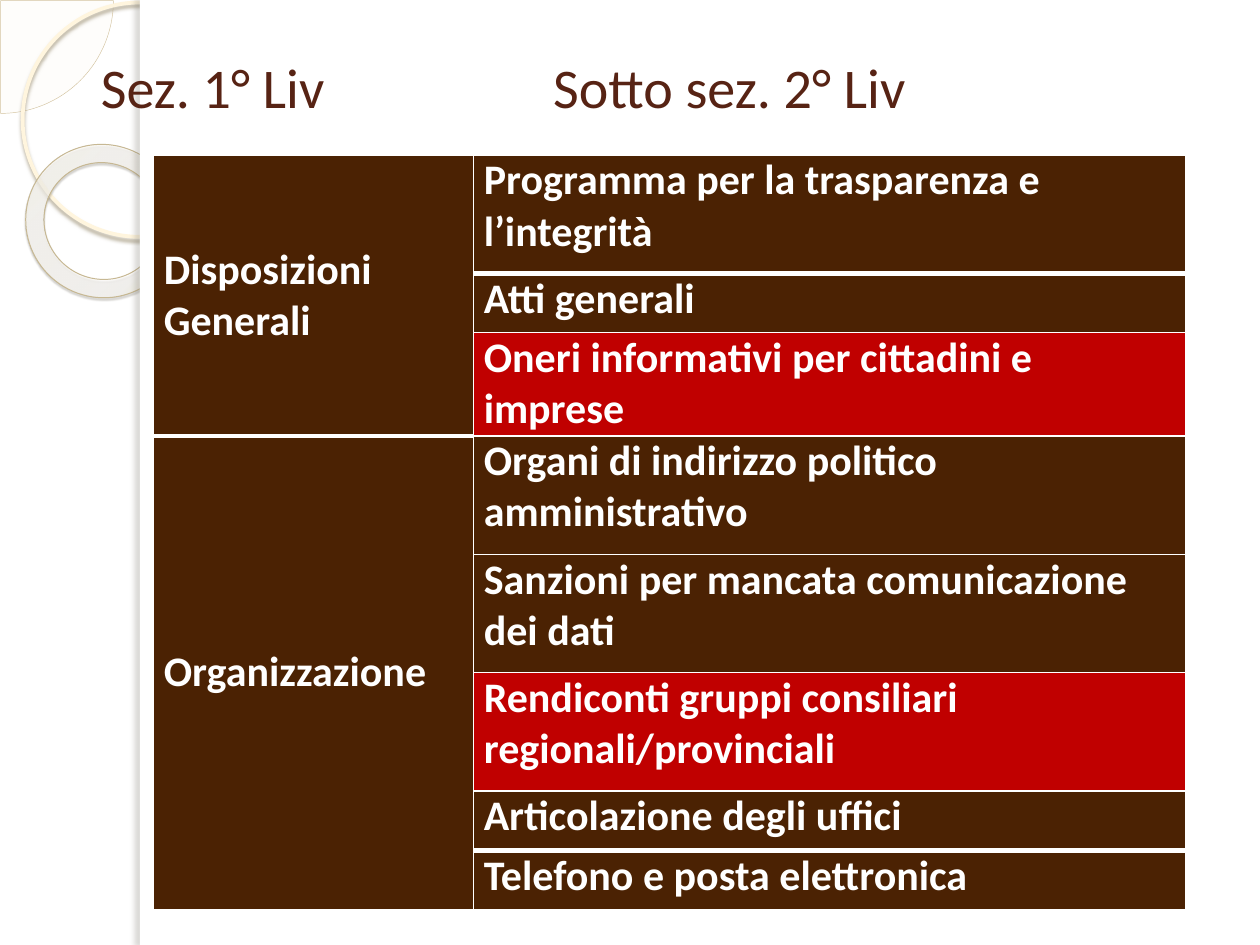
from dataclasses import dataclass
from lxml.etree import SubElement
from pptx import Presentation
from pptx.dml.color import RGBColor
from pptx.enum.shapes import MSO_SHAPE
from pptx.enum.text import MSO_ANCHOR, PP_ALIGN
from pptx.oxml.ns import qn
from pptx.util import Inches, Pt


@dataclass(frozen=True)
class Theme:
    font: str = "Calibri"
    head: str = "572314"
    brown: str = "4B2203"
    red: str = "C00000"
    white: str = "FFFFFF"
    cream: str = "FEFAF4"
    sand: str = "D3C39F"
    ring: str = "FFF5DE"
    edge: str = "C7B893"
    big: int = 32
    body: int = 24


def node(up, tag, **keys):
    return SubElement(up, qn("a:" + tag), {k: str(v) for k, v in keys.items()})


def tint(up, color, alpha):
    node(node(up, "srgbClr", val=color), "alpha", val=alpha * 1000)


class Deck:
    def __init__(self, theme):
        self.theme = theme
        self.file = Presentation()
        self.file.slide_width = Inches(10)
        self.file.slide_height = Inches(7.5)
        self.slide = self.file.slides.add_slide(self.file.slide_layouts[5])

    def text(self, para, words, size, color, bold=False):
        run = para.add_run()
        run.text = words
        font = run.font
        font.name, font.size, font.bold = self.theme.font, Pt(size), bold
        font.color.rgb = RGBColor.from_string(color)

    def shape(self, kind, box, fill=None, alpha=100, line=None, shade=None):
        item = self.slide.shapes.add_shape(kind, *map(Inches, box))
        item.shadow.inherit = False
        if fill:
            item.fill.solid()
            item.fill.fore_color.rgb = RGBColor.from_string(fill)
            if alpha < 100:
                paint = item.element.spPr.find(qn("a:solidFill"))
                node(paint[0], "alpha", val=alpha * 1000)
        else:
            item.fill.background()
        if line:
            item.line.color.rgb = RGBColor.from_string(line[0])
            item.line.width = Pt(line[1])
        else:
            item.line.fill.background()
        if shade:
            color, alpha, blur, dist, turn = shade
            glow = node(item.element.spPr.find(qn("a:effectLst")), "outerShdw",
                        blurRad=Pt(blur), dist=Pt(dist), dir=turn * 60000,
                        algn="ctr", rotWithShape=0)
            tint(glow, color, alpha)
        return item

    def blend(self, item, stops, rect):
        spot = item.element.spPr.find(qn("a:noFill"))
        grad = node(item.element.spPr, "gradFill", rotWithShape=1)
        spot.getparent().replace(spot, grad)
        stack = node(grad, "gsLst")
        for pos, color, alpha in stops:
            tint(node(stack, "gs", pos=pos * 1000), color, alpha)
        sides = {k: v * 1000 for k, v in zip("ltrb", rect)}
        node(node(grad, "path", path="circle"), "fillToRect", **sides)

    def title(self, parts, box, inset, stop):
        item = self.slide.shapes.title
        item.left, item.top, item.width, item.height = map(Inches, box)
        frame = item.text_frame
        frame.margin_left = Inches(inset)
        frame.vertical_anchor = MSO_ANCHOR.MIDDLE
        para = frame.paragraphs[0]
        para.alignment = PP_ALIGN.LEFT
        tabs = node(para._p.get_or_add_pPr(), "tabLst")
        node(tabs, "tab", pos=Inches(stop), algn="l")
        self.text(para, "\t".join(parts), self.theme.big, self.theme.head)
        item.element.getparent().append(item.element)

    def edges(self, cell, top, base):
        prop = cell._tc.get_or_add_tcPr()
        sides = zip(("lnL", "lnR", "lnT", "lnB"), (1, 1, top, base))
        for spot, (tag, width) in enumerate(sides):
            line = node(prop, tag, w=Pt(width))
            node(node(line, "solidFill"), "srgbClr", val=self.theme.white)
            prop.insert(spot, line)

    def cell(self, cell, words, fill, anchor):
        cell.fill.solid()
        cell.fill.fore_color.rgb = RGBColor.from_string(fill)
        cell.margin_left = cell.margin_right = Inches(0.08)
        cell.margin_top = cell.margin_bottom = 0
        cell.vertical_anchor = anchor
        para = cell.text_frame.paragraphs[0]
        self.text(para, words, self.theme.body, self.theme.white, True)

    def table(self, groups, box, cols, rows, thick):
        grid = self.slide.shapes.add_table(
            len(rows), len(cols), *map(Inches, box)).table
        grid.first_row = grid.horz_banding = False
        for col, width in zip(grid.columns, cols):
            col.width = Inches(width)
        for row, height in zip(grid.rows, rows):
            row.height = Inches(height)
        for r in range(len(rows)):
            for c in range(len(cols)):
                top = 3 if (r, c) in thick else 1
                base = 3 if (r + 1, c) in thick else 1
                self.edges(grid.cell(r, c), top, base)
        first = 0
        for name, items in groups:
            last = first + len(items) - 1
            head = grid.cell(first, 0)
            head.merge(grid.cell(last, 0))
            self.cell(head, name, self.theme.brown, MSO_ANCHOR.MIDDLE)
            for r, (words, fill) in enumerate(items, first):
                self.cell(grid.cell(r, 1), words, fill, MSO_ANCHOR.TOP)
            first = last + 1


def main():
    look = Theme()
    deck = Deck(look)
    pie = deck.shape(MSO_SHAPE.PIE, (-0.89, -0.89, 1.79, 1.79), look.cream, 33,
                     (look.sand, 0.25))
    pie.adjustments[0], pie.adjustments[1] = 0, 54
    deck.shape(MSO_SHAPE.OVAL, (0.18, 0.02, 1.86, 1.86),
               line=(look.ring, 2.15), shade=("B0A68F", 85, 2, 2, 90))
    ring = deck.shape(MSO_SHAPE.DONUT, (0.2, 1.15, 1.23, 1.21),
                      line=(look.edge, 0.58), shade=("5A5444", 35, 1, 1.2, 75))
    ring.rotation = 38.6
    ring.adjustments[0] = 0.12
    stops = [(0, "FFFCF6", 70), (70, "FFFEFB", 55), (100, "F0D28E", 60)]
    deck.blend(ring, stops, (-408, -50, 508, 150))
    deck.shape(MSO_SHAPE.RECTANGLE, (1.11, 0, 8.89, 7.5), look.white)
    deck.shape(MSO_SHAPE.RECTANGLE, (1.11, 0, 0.08, 7.5), look.white,
               shade=("736F63", 25, 3, 3, 180))
    deck.title(("Sez. 1° Liv", "Sotto sez. 2° Liv"), (0.5, 0.3, 9, 0.77),
               0.3, 3.59)

    brown, red = look.brown, look.red
    groups = [
        ("Disposizioni Generali", [
            ("Programma per la trasparenza e l’integrità", brown),
            ("Atti generali", brown),
            ("Oneri informativi per cittadini e imprese", red)]),
        ("Organizzazione", [
            ("Organi di indirizzo politico amministrativo", brown),
            ("Sanzioni per mancata comunicazione dei dati", brown),
            ("Rendiconti gruppi consiliari regionali/provinciali", red),
            ("Articolazione degli uffici", brown),
            ("Telefono e posta elettronica", brown)]),
    ]
    rows = [0.94, 0.47, 0.82, 0.94, 0.94, 0.94, 0.47, 0.47]
    deck.table(groups, (1.22, 1.23, 8.19, 6.01), (2.54, 5.65), rows,
               {(1, 1), (3, 0), (7, 1)})
    deck.file.save("out.pptx")


if __name__ == "__main__":
    main()
